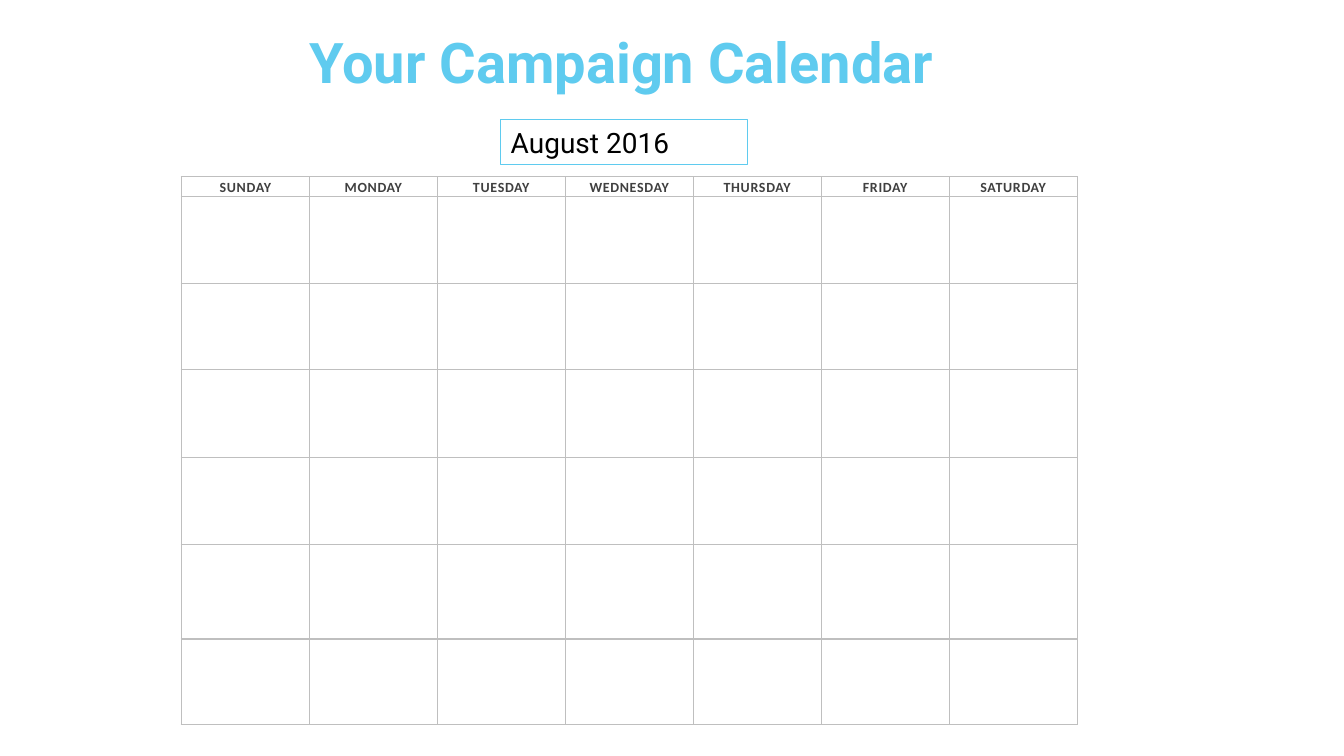
from lxml import etree
from pptx import Presentation
from pptx import util as u
from pptx.dml.color import RGBColor
from pptx.enum import shapes, text
from pptx.oxml.ns import qn

TITLE = "Your Campaign Calendar"
MONTH = "August 2016"
DAYS = ["SUNDAY", "MONDAY", "TUESDAY", "WEDNESDAY", "THURSDAY", "FRIDAY", "SATURDAY"]
HEAD, DATE = 0.48, 0.81
WEEKS = [1.4, 1.35, 1.4, 1.4, 1.56, 1.35]
SIZE = (33.87, 19.05)
SPOTS = {
    "title": (5.03, 0.58, 21.26, 1.96),
    "month": (12.62, 3.02, 6.22, 1.12),
    "grid": (4.57, 4.45, 22.58, 13.8),
}
THEME = {
    "accent": "5FCBEF",
    "grid": "BFBFBF",
    "title": {"name": "Roboto", "size": 40, "bold": True, "color": "5FCBEF"},
    "month": {"name": "Roboto", "size": 20, "bold": False, "color": "000000"},
    "day": {"name": "Calibri", "size": 10, "bold": True, "color": "404040"},
}
NO_GRID = "{2D5ABB26-0587-4C30-8999-92F81FD0307C}"


def place(key):
    return [u.Cm(n) for n in SPOTS[key]]


def apply(item, values):
    for name, value in values.items():
        setattr(item, name, value)


def write(para, words, style, align):
    para.alignment = align
    run = para.add_run()
    run.text = words
    look = dict(THEME[style])
    run.font.color.rgb = RGBColor.from_string(look.pop("color"))
    look["size"] = u.Pt(look["size"])
    apply(run.font, look)
    return run


def border(cell, sides):
    props = cell._tc.get_or_add_tcPr()
    for side in sides:
        line = etree.SubElement(props, qn("a:ln" + side), w=str(u.Pt(1)))
        fill = etree.SubElement(line, qn("a:solidFill"))
        etree.SubElement(fill, qn("a:srgbClr"), val=THEME["grid"])
    cell.fill.background()


def add_grid(slide):
    rows = [HEAD] + [tall for week in WEEKS for tall in (DATE, week)]
    table = slide.shapes.add_table(len(rows), len(DAYS), *place("grid")).table
    apply(table, {"first_row": False, "horz_banding": False})
    table._tbl.tblPr.find(qn("a:tableStyleId")).text = NO_GRID
    for col in table.columns:
        col.width = u.Cm(SPOTS["grid"][2] / len(DAYS))
    for r, tall in enumerate(rows):
        table.rows[r].height = u.Cm(tall)
        sides = "LRTB" if r == 0 else "LR" if r % 2 else "LRB"
        for cell in table.rows[r].cells:
            apply(cell, {"margin_left": u.Cm(0.18), "margin_right": u.Cm(0.18),
                         "margin_top": 0, "margin_bottom": 0})
            border(cell, sides)
    for cell, day in zip(table.rows[0].cells, DAYS):
        cell.vertical_anchor = text.MSO_ANCHOR.BOTTOM
        para = cell.text_frame.paragraphs[0]
        apply(para, {"line_spacing": 1.15, "space_before": u.Pt(2), "space_after": u.Pt(2)})
        run = write(para, day, "day", text.PP_ALIGN.CENTER)
        run.font._element.set("spc", "50")


def add_title(slide):
    frame = slide.shapes.add_textbox(*place("title")).text_frame
    frame.word_wrap = True
    write(frame.paragraphs[0], TITLE, "title", text.PP_ALIGN.CENTER)


def add_month(slide):
    box = slide.shapes.add_shape(shapes.MSO_SHAPE.RECTANGLE, *place("month"))
    box.shadow.inherit = False
    box.fill.background()
    box.line.color.rgb = RGBColor.from_string(THEME["accent"])
    box.line.width = u.Pt(0.75)
    apply(box.text_frame, {"word_wrap": True, "vertical_anchor": text.MSO_ANCHOR.MIDDLE})
    write(box.text_frame.paragraphs[0], MONTH, "month", text.PP_ALIGN.LEFT)


def main():
    deck = Presentation()
    apply(deck, {"slide_width": u.Cm(SIZE[0]), "slide_height": u.Cm(SIZE[1])})
    slide = deck.slides.add_slide(deck.slide_layouts[6])
    add_grid(slide)
    add_title(slide)
    add_month(slide)
    deck.save("out.pptx")


if __name__ == "__main__":
    main()
